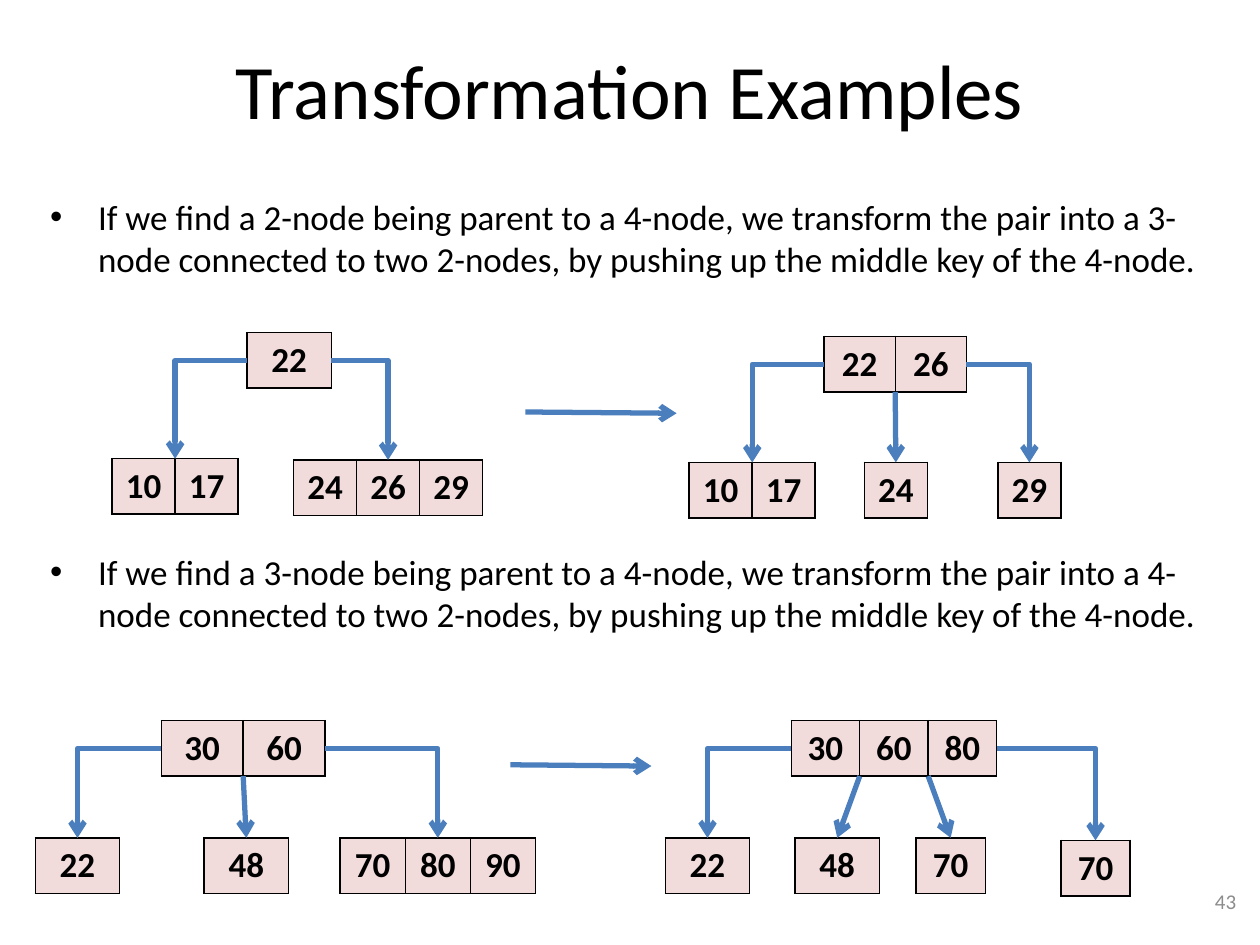
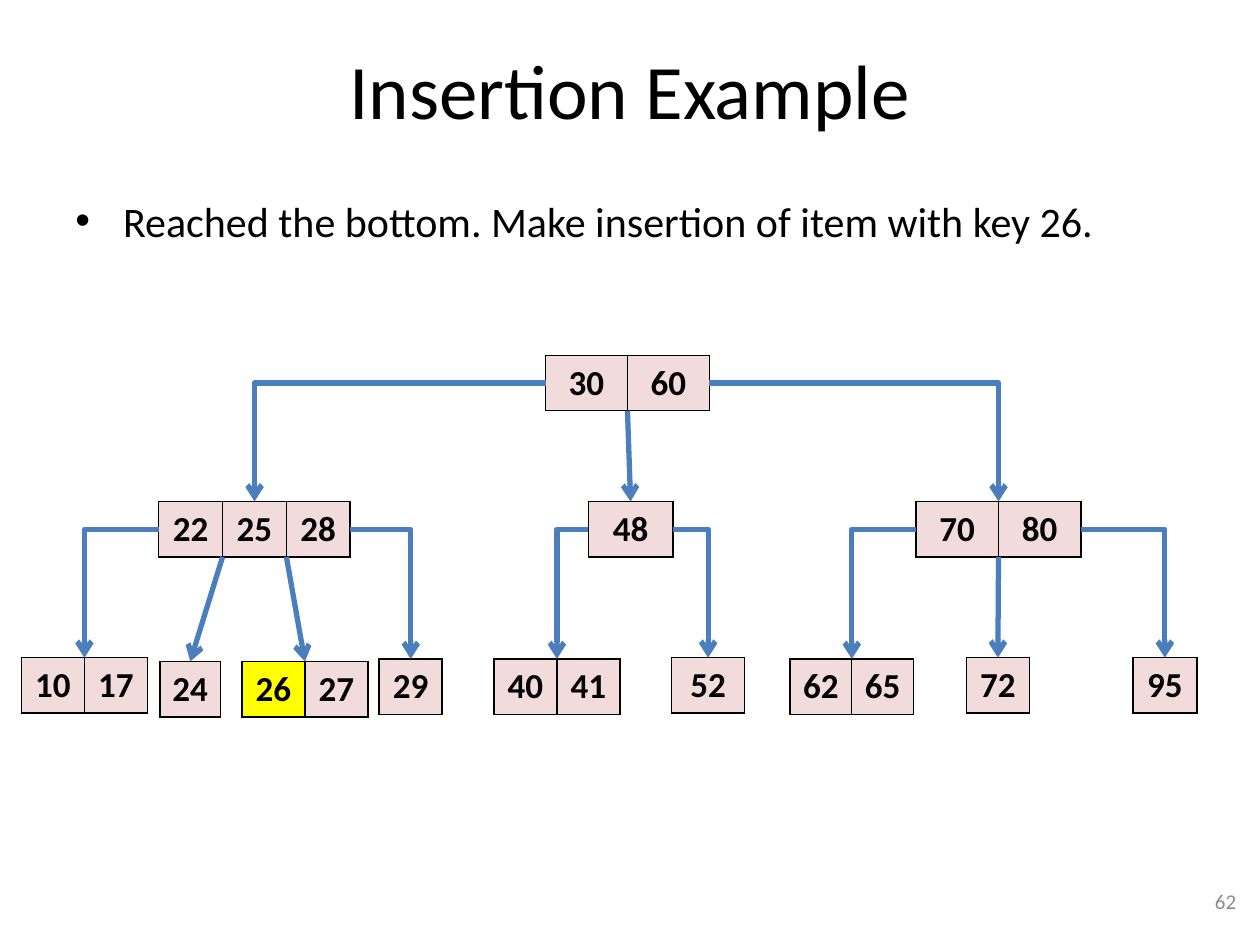
import pptx
import pptx.util
import pptx.dml.color
import pptx.enum.shapes
import pptx.enum.text
import pptx.oxml.ns
from dataclasses import dataclass
from lxml import etree

Inches = pptx.util.Inches
Pt = pptx.util.Pt
Align = pptx.enum.text.PP_ALIGN
Anchor = pptx.enum.text.MSO_ANCHOR
Link = pptx.enum.shapes.MSO_CONNECTOR
qn = pptx.oxml.ns.qn


@dataclass(frozen=True)
class Theme:
    font: str = "Calibri"
    ink: str = "000000"
    grey: str = "8C8C8C"
    cell: str = "F2DCDB"
    mark: str = "FFFF00"
    arrow: str = "4B7EBC"
    title: int = 44
    lead: int = 24
    body: int = 20
    foot: int = 12
    rule: int = 1
    stroke: int = 3
    row: float = 0.44
    pad: float = 0.05
    indent: float = 0.38


@dataclass(frozen=True)
class Node:
    x: float
    y: float
    w: float
    keys: str
    kids: tuple = ()

    @property
    def mid(self):
        return self.x + self.w / 2


THEME = Theme()


def color(code):
    return pptx.dml.color.RGBColor.from_string(code)


def put(frame, text, size=THEME.body, ink=THEME.ink, bold=False,
        align=Align.LEFT, anchor=Anchor.TOP, bullet=False):
    frame.word_wrap = True
    frame.vertical_anchor = anchor
    para = frame.paragraphs[0]
    para.alignment = align
    run = para.add_run()
    run.text = text
    font = run.font
    font.name, font.size, font.bold = THEME.font, Pt(size), bold
    font.color.rgb = color(ink)
    if bullet:
        props = para._p.get_or_add_pPr()
        props.set("marL", str(Inches(THEME.indent)))
        props.set("indent", str(-Inches(THEME.indent)))
        etree.SubElement(props, qn("a:buFont"), typeface="Arial")
        etree.SubElement(props, qn("a:buChar"), char="•")


def label(slide, box, text, **form):
    shape = slide.shapes.add_textbox(*map(Inches, box))
    put(shape.text_frame, text, **form)


def border(cell):
    props = cell._tc.get_or_add_tcPr()
    for side in ("lnL", "lnR", "lnT", "lnB"):
        line = etree.SubElement(props, qn("a:" + side), w=str(Pt(THEME.rule)))
        fill = etree.SubElement(line, qn("a:solidFill"))
        etree.SubElement(fill, qn("a:srgbClr"), val=THEME.ink)


def draw(slide, left, top, node, hot):
    keys = node.keys.split()
    table = slide.shapes.add_table(
        1, len(keys), Inches(left + node.x), Inches(top + node.y),
        Inches(node.w), Inches(THEME.row)).table
    table.first_row = table.horz_banding = False
    for col, key in enumerate(keys):
        table.columns[col].width = Inches(node.w / len(keys))
        cell = table.cell(0, col)
        border(cell)
        cell.margin_left = cell.margin_right = Inches(THEME.pad)
        cell.fill.solid()
        cell.fill.fore_color.rgb = color(THEME.mark if key == hot else THEME.cell)
        put(cell.text_frame, key, bold=True, align=Align.CENTER)


def arrow(slide, start, end, bent=False):
    kind = Link.ELBOW if bent else Link.STRAIGHT
    link = slide.shapes.add_connector(kind, *map(Inches, (*start, *end)))
    link.line.color.rgb = color(THEME.arrow)
    link.line.width = Pt(THEME.stroke)
    props = link._element.spPr
    etree.SubElement(props.find(qn("a:ln")), qn("a:tailEnd"), type="arrow")
    etree.SubElement(props, qn("a:effectLst"))
    if bent:
        props.find(qn("a:prstGeom")).set("prst", "bentConnector2")
        if end[0] < start[0]:
            frame = props.find(qn("a:xfrm"))
            frame.attrib.pop("flipH")
            frame.set("rot", "10800000")
            frame.set("flipV", "1")


def tree(slide, left, top, node, hot=None):
    draw(slide, left, top, node, hot)
    for kid in node.kids:
        tree(slide, left, top, kid, hot)
    last = len(node.kids) - 1
    step = node.w / len(node.keys.split())
    for spot, kid in enumerate(node.kids):
        bent = spot in (0, last)
        if bent:
            start = node.x + (node.w if spot else 0), node.y + THEME.row / 2
        else:
            start = node.x + spot * step, node.y + THEME.row
        arrow(slide, (left + start[0], top + start[1]),
              (left + kid.mid, top + kid.y), bent)


def page(deck, title, number):
    slide = deck.slides.add_slide(deck.slide_layouts[6])
    label(slide, (0.5, 0.08, 9, 1.25), title, size=THEME.title,
          align=Align.CENTER, anchor=Anchor.MIDDLE)
    label(slide, (7.58, 6.95, 2.33, 0.4), number, size=THEME.foot,
          ink=THEME.grey, align=Align.RIGHT, anchor=Anchor.MIDDLE)
    return slide


def change(slide, top, old, new):
    text = (f"If we find a {old}-node being parent to a 4-node, we transform "
            f"the pair into a {new}-node connected to two 2-nodes, "
            "by pushing up the middle key of the 4-node.")
    label(slide, (0.3, top, 9.48, 0.8), text, bullet=True)


def transform(deck):
    slide = page(deck, "Transformation Examples", "43")
    change(slide, 1.5, 2, 3)
    tree(slide, 0.89, 2.64, Node(1.07, 0, 0.67, "22", (
        Node(0, 1, 1, "10 17"),
        Node(1.44, 1.01, 1.5, "24 26 29"))))
    arrow(slide, (4.17, 3.27), (5.37, 3.28))
    tree(slide, 5.47, 2.67, Node(1.07, 0, 1.13, "22 26", (
        Node(0, 1, 1, "10 17"),
        Node(1.39, 1, 0.5, "24"),
        Node(2.45, 1, 0.5, "29"))))
    change(slide, 4.32, 3, 4)
    tree(slide, 0.28, 5.72, Node(1, 0, 1.3, "30 60", (
        Node(0, 0.93, 0.67, "22"),
        Node(1.34, 0.93, 0.67, "48"),
        Node(2.42, 0.93, 1.55, "70 80 90"))))
    arrow(slide, (4.05, 6.07), (5.17, 6.08))
    tree(slide, 5.28, 5.72, Node(1, 0, 1.63, "30 60 80", (
        Node(0, 0.93, 0.67, "22"),
        Node(1.03, 0.93, 0.67, "48"),
        Node(1.99, 0.93, 0.55, "70"),
        Node(3.14, 0.95, 0.55, "70"))))


def insert(deck):
    slide = page(deck, "Insertion Example", "62")
    label(slide, (0.5, 1.5, 9, 0.6),
          "Reached the bottom. Make insertion of item with key 26.",
          size=THEME.lead, bullet=True)
    low = Node(1.09, 1.16, 1.52, "22 25 28", (
        Node(0, 2.4, 1, "10 17"),
        Node(1.1, 2.43, 0.48, "24"),
        Node(1.75, 2.43, 1, "26 27"),
        Node(2.84, 2.41, 0.5, "29")))
    center = Node(4.5, 1.16, 0.67, "48", (
        Node(3.75, 2.41, 1, "40 41"),
        Node(5.16, 2.4, 0.58, "52")))
    high = Node(7.1, 1.16, 1.31, "70 80", (
        Node(6.1, 2.41, 0.98, "62 65"),
        Node(7.5, 2.4, 0.5, "72"),
        Node(8.82, 2.4, 0.51, "95")))
    root = Node(4.16, 0, 1.3, "30 60", (low, center, high))
    tree(slide, 0.17, 2.82, root, hot="26")


def main():
    deck = pptx.Presentation()
    deck.slide_width, deck.slide_height = Inches(10), Inches(7.5)
    transform(deck)
    insert(deck)
    deck.save("out.pptx")


if __name__ == "__main__":
    main()
